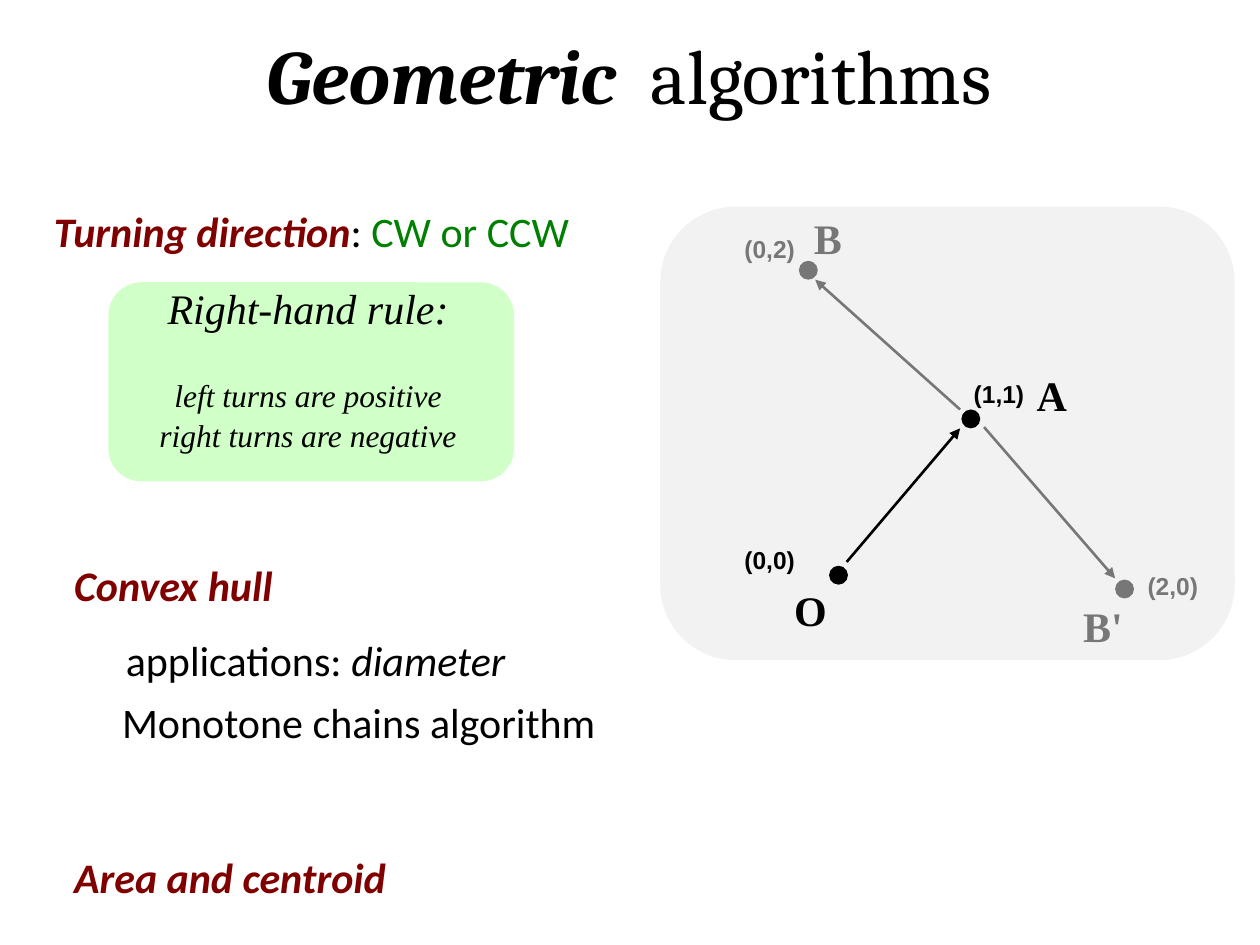
from lxml.etree import SubElement
from pptx import Presentation
from pptx.dml.color import RGBColor
from pptx.enum.shapes import MSO_CONNECTOR, MSO_SHAPE
from pptx.enum.text import PP_ALIGN
from pptx.oxml.ns import qn
from pptx.util import Inches, Pt

BLACK, GRAY, MAROON, GREEN = "000000", "777777", "800000", "008000"
LEFT, CENTER, RIGHT = PP_ALIGN.LEFT, PP_ALIGN.CENTER, PP_ALIGN.RIGHT

TITLE = [("Geometric ", BLACK, "bi"), (" algorithms", BLACK, "")]
TOPICS = [
    (0.33, 1.58, [("Turning direction", MAROON, "bi"), (": ", BLACK, ""), ("CW or CCW", GREEN, "")]),
    (0.49, 4.39, [("Convex hull", MAROON, "bi")]),
    (0.9, 4.99, [("applications: ", BLACK, ""), ("diameter", BLACK, "i")]),
    (0.87, 5.48, [("Monotone chains algorithm", BLACK, "")]),
    (0.49, 6.71, [("Area and centroid", MAROON, "bi")]),
]
RULE = [("Right-hand rule:", 24, 0), ("left turns are positive", 18, 32), ("right turns are negative", 18, 9)]
PANELS = [((0.86, 2.24, 3.22, 1.58), "D0FFC7"), ((5.24, 1.64, 4.56, 3.6), "F2F2F2")]
DOT = 0.15
POINTS = [
    ("O", "(0,0)", BLACK, (6.58, 4.49), (5.66, 4.59, 1, 0.5), RIGHT, (5.81, 4.28)),
    ("A", "(1,1)", BLACK, (7.63, 3.25), (8.13, 2.88, 0.5, 0.5), LEFT, (7.63, 2.96)),
    ("B", "(0,2)", GRAY, (6.34, 2.07), (5.78, 1.64, 1, 0.5), RIGHT, (5.81, 1.81)),
    ("B'", "(2,0)", GRAY, (8.85, 4.6), (8.01, 4.72, 1, 0.5), RIGHT, (9.01, 4.48)),
]
ARROWS = [
    ((6.72, 4.46), (7.62, 3.4), BLACK),
    ((7.62, 3.25), (6.47, 2.22), GRAY),
    ((7.81, 3.39), (8.85, 4.59), GRAY),
]


def color(value):
    """Turn a hex string into a colour."""
    return RGBColor.from_string(value)


def add_box(page, place, wrap=True):
    """Add an empty text box and return its text frame."""
    frame = page.shapes.add_textbox(*map(Inches, place)).text_frame
    frame.word_wrap = wrap
    return frame


def write(para, spans, font, size, align=LEFT):
    """Write styled spans into a paragraph."""
    para.alignment = align
    for text, shade, style in spans:
        span = para.add_run()
        span.text = text
        span.font.name = font
        span.font.size = Pt(size)
        span.font.bold = "b" in style
        span.font.italic = "i" in style
        span.font.color.rgb = color(shade)


def add_filled(page, kind, place, fill):
    """Add a flat preset shape without an outline."""
    shape = page.shapes.add_shape(kind, *map(Inches, place))
    shape.shadow.inherit = False
    shape.fill.solid()
    shape.fill.fore_color.rgb = color(fill)
    shape.line.fill.background()


def add_arrow(page, start, end, shade):
    """Add a straight arrow from start to end."""
    arrow = page.shapes.add_connector(MSO_CONNECTOR.STRAIGHT, *map(Inches, start + end))
    arrow.line.color.rgb = color(shade)
    arrow.line.width = Pt(1.5)
    SubElement(arrow.line._get_or_add_ln(), qn("a:tailEnd"), type="triangle")
    SubElement(arrow._element.spPr, qn("a:effectLst"))


def add_rule(page):
    """Write the right-hand rule on its panel."""
    frame = add_box(page, (0.95, 2.4, 2.99, 1.36))
    for index, (text, size, gap) in enumerate(RULE):
        para = frame.add_paragraph() if index else frame.paragraphs[0]
        para.line_spacing = Pt(14)
        para.space_before = Pt(gap)
        write(para, [(text, BLACK, "i")], "Times New Roman", size, CENTER)


def main():
    """Build the slide on geometric algorithms."""
    deck = Presentation()
    deck.slide_width, deck.slide_height = Inches(10), Inches(7.5)
    page = deck.slides.add_slide(deck.slide_layouts[6])

    for place, fill in PANELS:
        add_filled(page, MSO_SHAPE.ROUNDED_RECTANGLE, place, fill)
    write(add_box(page, (0.74, 0.17, 8.51, 0.83)).paragraphs[0], TITLE, "Cambria", 44, CENTER)
    for left, top, spans in TOPICS:
        write(add_box(page, (left, top, 4.75, 0.51)).paragraphs[0], spans, "Calibri", 24)
    add_rule(page)

    for name, coordinates, shade, dot, name_place, align, corner in POINTS:
        add_filled(page, MSO_SHAPE.OVAL, dot + (DOT, DOT), shade)
        name_box = add_box(page, name_place)
        write(name_box.paragraphs[0], [(name, shade, "b")], "Times New Roman", 24, align)
        label_box = add_box(page, corner + (0.6, 0.34), wrap=False)
        write(label_box.paragraphs[0], [(coordinates, shade, "b")], "Arial", 14)
    for start, end, shade in ARROWS:
        add_arrow(page, start, end, shade)

    deck.save("out.pptx")


if __name__ == "__main__":
    main()
